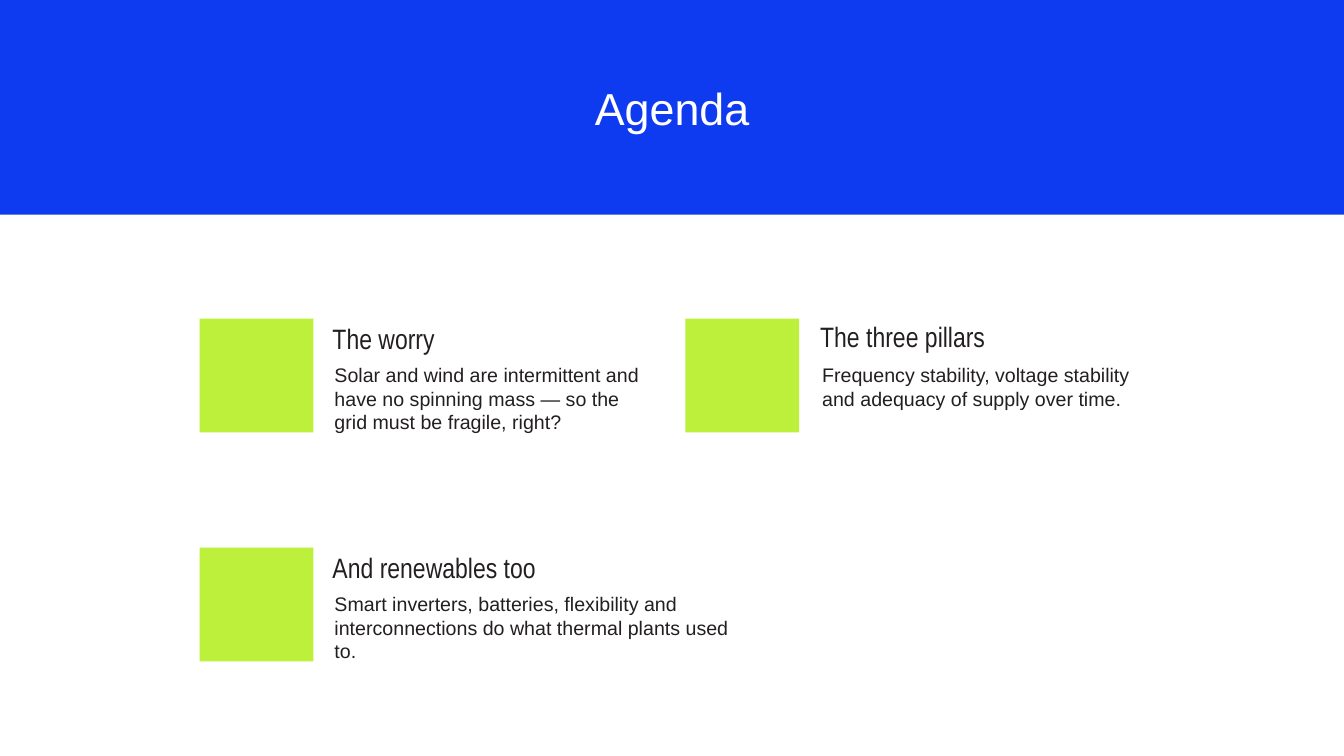
"""Build the agenda slide: a title band and three topics on a two-column grid."""
from pptx import Presentation
from pptx.dml.color import RGBColor
from pptx.enum.shapes import MSO_SHAPE
from pptx.enum.text import MSO_ANCHOR, PP_ALIGN
from pptx.util import Cm, Pt

COLORS = {"band": "0E3AF0", "marker": "BDF03A", "text": "231F20", "title": "FFFFFF"}
SLIDE_WIDTH, SLIDE_HEIGHT = 33.87, 19.05
GRID_LEFT, GRID_TOP = 5.03, 8.03
COLUMN_STEP, ROW_STEP = 12.24, 5.77
MARKER_SIZE = 2.87

# column, row, heading offset (x, y), body width, heading, body
TOPICS = [
    (0, 0, (3.1, -0.05), 8.36, "The worry",
     "Solar and wind are intermittent and have no spinning mass — so the grid must be fragile, right?"),
    (1, 0, (3.15, -0.1), 9.07, "The three pillars",
     "Frequency stability, voltage stability and adequacy of supply over time."),
    (0, 1, (3.1, -0.05), 10.44, "And renewables too",
     "Smart inverters, batteries, flexibility and interconnections do what thermal plants used to."),
]


def style_paragraph(paragraph, font_name, size, color):
    paragraph.font.name = font_name
    paragraph.font.size = Pt(size)
    paragraph.font.color.rgb = RGBColor.from_string(COLORS[color])


def add_rectangle(slide, left, top, width, height, color):
    shape = slide.shapes.add_shape(
        MSO_SHAPE.RECTANGLE, Cm(left), Cm(top), Cm(width), Cm(height))
    shape.shadow.inherit = False
    shape.fill.solid()
    shape.fill.fore_color.rgb = RGBColor.from_string(COLORS[color])
    shape.line.fill.background()
    return shape


def add_text(slide, left, top, width, height, text, font_name, size):
    text_frame = slide.shapes.add_textbox(
        Cm(left), Cm(top), Cm(width), Cm(height)).text_frame
    text_frame.word_wrap = True
    paragraph = text_frame.paragraphs[0]
    paragraph.text = text
    style_paragraph(paragraph, font_name, size, "text")


def add_title(slide, text):
    title = slide.shapes.title
    title.left, title.top, title.width, title.height = Cm(8.48), Cm(1.9), Cm(16.92), Cm(1.63)
    title.text_frame.vertical_anchor = MSO_ANCHOR.MIDDLE
    paragraph = title.text_frame.paragraphs[0]
    paragraph.text = text
    paragraph.alignment = PP_ALIGN.CENTER
    style_paragraph(paragraph, "Arial", 32, "title")
    band = add_rectangle(slide, 0, 0, SLIDE_WIDTH, 5.41, "band")
    title.element.addprevious(band.element)


def add_topic(slide, column, row, heading_offset, body_width, heading, body):
    left = GRID_LEFT + column * COLUMN_STEP
    top = GRID_TOP + row * ROW_STEP
    text_left = left + heading_offset[0]
    add_rectangle(slide, left, top, MARKER_SIZE, MARKER_SIZE, "marker")
    add_text(slide, text_left + 0.05, top + 0.99, body_width, 2.06, body, "Arial", 14)
    add_text(slide, text_left, top + heading_offset[1], 8.41, 1.12, heading, "Arial Narrow", 20)


def main():
    presentation = Presentation()
    presentation.slide_width = Cm(SLIDE_WIDTH)
    presentation.slide_height = Cm(SLIDE_HEIGHT)
    slide = presentation.slides.add_slide(presentation.slide_layouts[5])
    add_title(slide, "Agenda")
    for topic in TOPICS:
        add_topic(slide, *topic)
    presentation.save("out.pptx")


if __name__ == "__main__":
    main()
